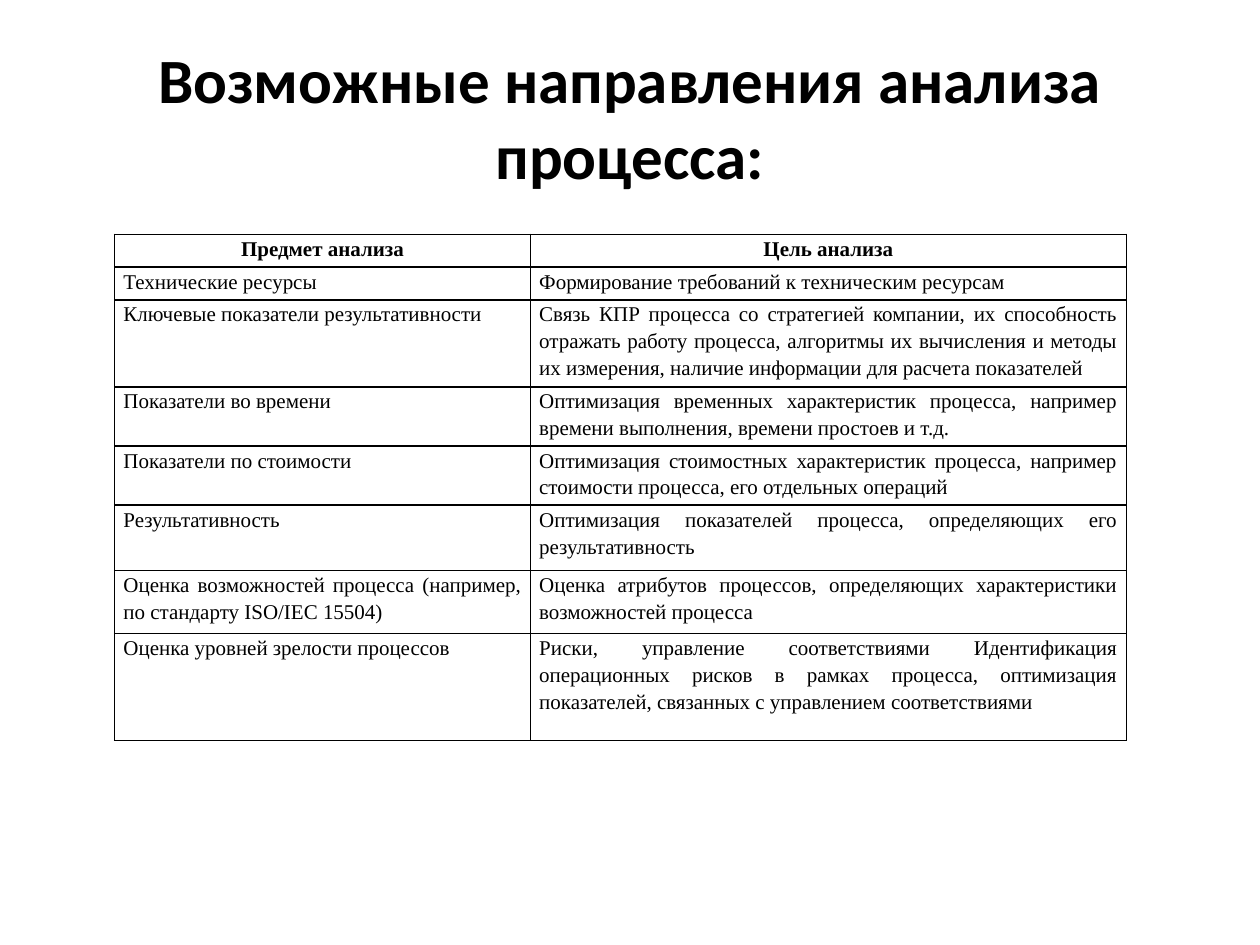
import dataclasses

import lxml.etree
import pptx
import pptx.dml.color
import pptx.enum.text
import pptx.oxml.ns
import pptx.util

Inches = pptx.util.Inches
Pt = pptx.util.Pt
Align = pptx.enum.text.PP_ALIGN
Anchor = pptx.enum.text.MSO_ANCHOR


@dataclasses.dataclass(frozen=True)
class Theme:
    ink: str = "000000"
    title_font: str = "Calibri"
    table_font: str = "Times New Roman"
    title_size: int = 36
    table_size: int = 12
    border_width: int = 1


theme = Theme()


def style_paragraph(para, font_name, size, bold, alignment):
    para.alignment = alignment
    for span in para.runs:
        span.font.name = font_name
        span.font.size = Pt(size)
        span.font.bold = bold
        span.font.color.rgb = pptx.dml.color.RGBColor.from_string(theme.ink)


def add_borders(cell):
    properties = cell._tc.get_or_add_tcPr()
    qn = pptx.oxml.ns.qn
    for side in ("a:lnL", "a:lnR", "a:lnT", "a:lnB"):
        line = lxml.etree.SubElement(properties, qn(side), w=str(Pt(theme.border_width)))
        fill = lxml.etree.SubElement(line, qn("a:solidFill"))
        lxml.etree.SubElement(fill, qn("a:srgbClr"), val=theme.ink)


deck = pptx.Presentation()
deck.slide_width = Inches(10)
deck.slide_height = Inches(7.5)
page = deck.slides.add_slide(deck.slide_layouts[6])

# Title
box = page.shapes.add_textbox(Inches(0.5), Inches(0.3), Inches(9), Inches(1.25))
box.text_frame.word_wrap = True
box.text_frame.vertical_anchor = Anchor.MIDDLE
box.text_frame.text = "Возможные направления анализа процесса:"
style_paragraph(box.text_frame.paragraphs[0], theme.title_font, theme.title_size, True, Align.CENTER)

# Table content: row height, subject, goal
rows = [
    (0.26, "Предмет анализа", "Цель анализа"),
    (0.26, "Технические ресурсы", "Формирование требований к техническим ресурсам"),
    (0.66, "Ключевые показатели результативности",
     "Связь КПР процесса со стратегией компании, их способность отражать работу процесса, "
     "алгоритмы их вычисления и методы их измерения, наличие информации для расчета показателей"),
    (0.47, "Показатели во времени",
     "Оптимизация временных характеристик процесса, например времени выполнения, "
     "времени простоев и т.д."),
    (0.47, "Показатели по стоимости",
     "Оптимизация стоимостных характеристик процесса, например стоимости процесса, "
     "его отдельных операций"),
    (0.52, "Результативность",
     "Оптимизация показателей процесса, определяющих его результативность"),
    (0.5, "Оценка возможностей процесса (например, по стандарту ISO/IEC 15504)",
     "Оценка атрибутов процессов, определяющих характеристики возможностей процесса"),
    (0.85, "Оценка уровней зрелости процессов",
     "Риски, управление соответствиями Идентификация операционных рисков в рамках процесса, "
     "оптимизация показателей, связанных с управлением соответствиями"),
]
column_widths = (3.3, 4.73)

# Table
table = page.shapes.add_table(
    len(rows), len(column_widths), Inches(0.91), Inches(1.86),
    Inches(sum(column_widths)), Inches(sum(row[0] for row in rows)),
).table
table.first_row = False
table.horz_banding = False
for column, width in zip(table.columns, column_widths):
    column.width = Inches(width)

for row_index, (height, *texts) in enumerate(rows):
    table.rows[row_index].height = Inches(height)
    is_header = row_index == 0
    for column_index, text in enumerate(texts):
        cell = table.cell(row_index, column_index)
        cell.margin_left = cell.margin_right = Inches(0.07)
        cell.margin_top = cell.margin_bottom = 0
        add_borders(cell)
        cell.fill.background()
        cell.text_frame.text = text
        para = cell.text_frame.paragraphs[0]
        para.line_spacing = 1.15
        style_paragraph(para, theme.table_font, theme.table_size, is_header,
                        Align.CENTER if is_header else Align.JUSTIFY)

deck.save("out.pptx")
